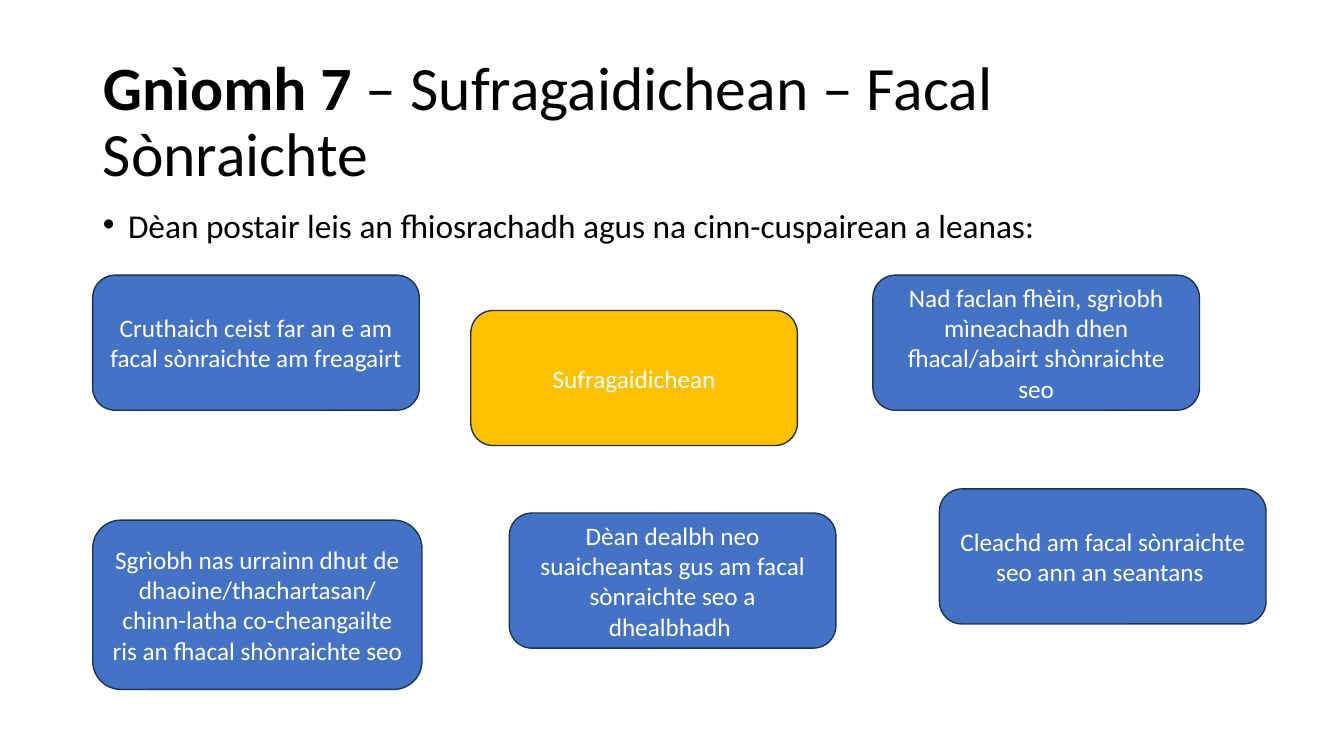
from pptx import Presentation
from pptx.dml.color import RGBColor
from pptx.enum.shapes import MSO_SHAPE as Shape
from pptx.enum.text import MSO_ANCHOR as Anchor, MSO_AUTO_SIZE as AutoSize, PP_ALIGN as Align
from pptx.util import Inches, Pt

BLACK = RGBColor(0x00, 0x00, 0x00)
WHITE = RGBColor(0xFF, 0xFF, 0xFF)
BLUE = RGBColor(0x44, 0x72, 0xC4)
GOLD = RGBColor(0xFF, 0xC0, 0x00)
NAVY = RGBColor(0x1E, 0x32, 0x56)

TOP_ROW = 36.4
LEFT_COLUMN = 6.9
CARD_SIZE = (24.3, 17.87)

CARDS = [
    ("Sufragaidichean", 35.03, 41.07, CARD_SIZE, GOLD),
    ("Nad faclan fhèin, sgrìobh mìneachadh dhen fhacal/abairt shònraichte seo",
     64.95, TOP_ROW, CARD_SIZE, BLUE),
    ("Cleachd am facal sònraichte seo ann an seantans ", 69.9, 64.67, CARD_SIZE, BLUE),
    ("Sgrìobh nas urrainn dhut de dhaoine/thachartasan/ "
     "chinn-latha co-cheangailte ris an fhacal shònraichte seo",
     LEFT_COLUMN, 68.8, (24.5, 22.4), BLUE),
    ("Cruthaich ceist far an e am facal sònraichte am freagairt ",
     LEFT_COLUMN, TOP_ROW, CARD_SIZE, BLUE),
    ("Dèan dealbh neo suaicheantas gus am facal sònraichte seo a dhealbhadh ",
     37.9, 67.87, CARD_SIZE, BLUE),
]


def add_text(paragraph, text, size=18, color=BLACK, bold=False, font="Calibri"):
    run = paragraph.add_run()
    run.text = text
    run.font.name = font
    run.font.size = Pt(size)
    run.font.bold = bold
    run.font.color.rgb = color


class SlideBuilder:
    def __init__(self, presentation):
        self.column = presentation.slide_width / 100
        self.row = presentation.slide_height / 100
        self.slide = presentation.slides.add_slide(presentation.slide_layouts[1])

    def area(self, left, top, width, height):
        return (round(left * self.column), round(top * self.row),
                round(width * self.column), round(height * self.row))

    def place(self, shape, *cells, anchor):
        shape.left, shape.top, shape.width, shape.height = self.area(*cells)
        frame = shape.text_frame
        frame.word_wrap = True
        frame.auto_size = AutoSize.NONE
        frame.vertical_anchor = anchor
        return frame.paragraphs[0]

    def title(self, lead, rest):
        paragraph = self.place(self.slide.shapes.title, LEFT_COLUMN, 6.67, 86.25, 19.33,
                               anchor=Anchor.MIDDLE)
        paragraph.alignment = Align.LEFT
        paragraph.line_spacing = 0.9
        add_text(paragraph, lead, size=44, bold=True)
        add_text(paragraph, rest, size=44)

    def bullet(self, text):
        paragraph = self.place(self.slide.placeholders[1], LEFT_COLUMN, 27.87, 86.25, 5.6,
                               anchor=Anchor.TOP)
        paragraph.line_spacing = 0.7
        paragraph.space_before = Pt(10)
        properties = paragraph._p.get_or_add_pPr()
        properties.set("marL", str(Inches(0.25)))
        properties.set("indent", str(-Inches(0.25)))
        add_text(paragraph, text, size=23.8)

    def card(self, text, left, top, size, fill):
        cells = (left, top, *size)
        shape = self.slide.shapes.add_shape(Shape.ROUNDED_RECTANGLE, *self.area(*cells))
        shape.shadow.inherit = False
        shape.fill.solid()
        shape.fill.fore_color.rgb = fill
        shape.line.color.rgb = NAVY
        shape.line.width = Pt(1)
        paragraph = self.place(shape, *cells, anchor=Anchor.MIDDLE)
        paragraph.alignment = Align.CENTER
        add_text(paragraph, text, color=WHITE)


def main():
    presentation = Presentation()
    presentation.slide_width = Inches(13.33)
    presentation.slide_height = Inches(7.5)
    builder = SlideBuilder(presentation)
    builder.title("Gnìomh 7 ", "– Sufragaidichean – Facal Sònraichte")
    builder.bullet("Dèan postair leis an fhiosrachadh agus na cinn-cuspairean a leanas:")
    for card in CARDS:
        builder.card(*card)
    presentation.save("out.pptx")


if __name__ == "__main__":
    main()
